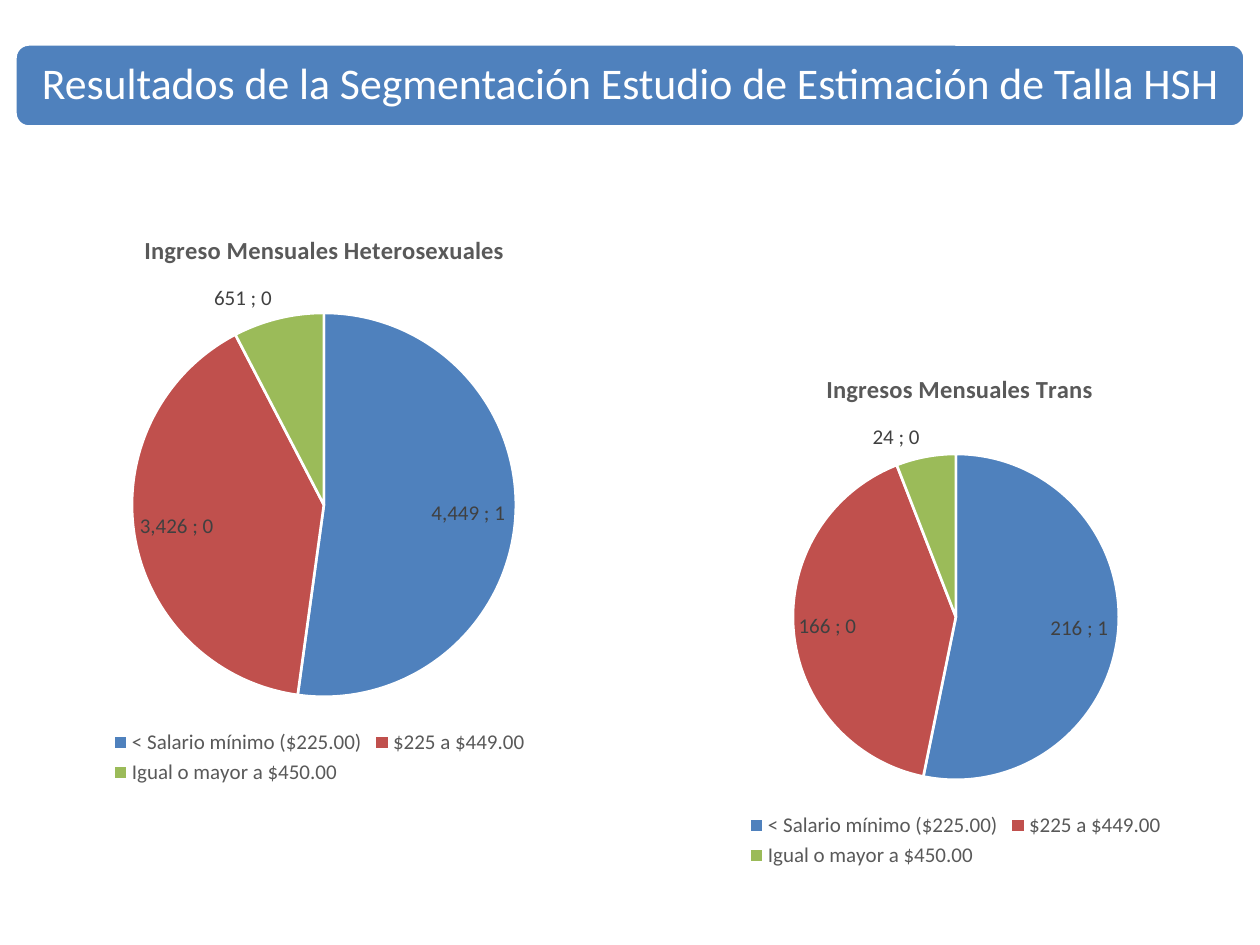
from dataclasses import dataclass

from lxml import etree
from pptx import Presentation
from pptx.chart.data import CategoryChartData
from pptx.dml.color import RGBColor
from pptx.enum.chart import XL_CHART_TYPE as ChartType
from pptx.enum.chart import XL_LABEL_POSITION as LabelPos
from pptx.enum.chart import XL_LEGEND_POSITION as LegendPos
from pptx.enum.shapes import MSO_SHAPE as Shape
from pptx.enum.text import MSO_ANCHOR as Anchor
from pptx.enum.text import MSO_AUTO_SIZE as AutoSize
from pptx.enum.text import PP_ALIGN as Align
from pptx.oxml.ns import qn
from pptx.util import Pt

PX = 914400 // 126  # EMU per pixel
TITLE_ONLY = 5


@dataclass(frozen=True)
class Theme:
    font: str = "Calibri"
    white: str = "FFFFFF"
    banner: str = "4F81BD"
    slices: tuple = ("4F81BD", "C0504D", "9BBB59")
    label: str = "404040"
    muted: str = "595959"
    title_size: float = 25
    chart_title_size: float = 14
    text_size: float = 12


def rgb(value):
    return RGBColor.from_string(value)


def set_layout(parent, index, **fractions):
    """Give a chart part a manual layout, as fractions of the chart."""
    for old in parent.findall(qn("c:layout")):
        parent.remove(old)
    layout = etree.Element(qn("c:layout"))
    manual = etree.SubElement(layout, qn("c:manualLayout"))
    if "w" in fractions:
        etree.SubElement(manual, qn("c:layoutTarget"), val="inner")
    for axis in "xy":
        etree.SubElement(manual, qn(f"c:{axis}Mode"), val="edge")
    for name, value in fractions.items():
        etree.SubElement(manual, qn(f"c:{name}"), val=f"{value:.4f}")
    parent.insert(index, layout)


class Deck:
    def __init__(self, width, height, theme):
        self.theme = theme
        self.prs = Presentation()
        self.prs.slide_width, self.prs.slide_height = width * PX, height * PX
        self.s = self.prs.slides.add_slide(self.prs.slide_layouts[TITLE_ONLY])

    def style(self, font, size, color, bold=False):
        font.name, font.size, font.bold = self.theme.font, Pt(size), bold
        font.color.rgb = rgb(color)

    def banner(self, *box):
        sp = self.s.shapes.add_shape(Shape.ROUNDED_RECTANGLE, *(v * PX for v in box))
        sp.shadow.inherit = False
        sp.fill.solid()
        sp.fill.fore_color.rgb = rgb(self.theme.banner)
        sp.line.color.rgb = rgb(self.theme.white)
        sp.line.width = Pt(2)

    def title(self, text, *box):
        sp = self.s.shapes.title
        sp.left, sp.top, sp.width, sp.height = (v * PX for v in box)
        tf = sp.text_frame
        tf.text = text
        tf.word_wrap, tf.auto_size = True, AutoSize.NONE
        tf.vertical_anchor = Anchor.MIDDLE
        tf.margin_left = tf.margin_right = tf.margin_top = tf.margin_bottom = 12 * PX
        p = tf.paragraphs[0]
        p.alignment, p.line_spacing = Align.CENTER, 0.9
        self.style(p.font, self.theme.title_size, self.theme.white)
        self.s.shapes._spTree.append(sp._element)  # in front of the banner

    def pie(self, title, categories, values, box, title_at, circle):
        """Add a pie; title_at is (left, top), circle is (left, top, diameter)."""
        theme = self.theme
        left, top, width, height = box
        data = CategoryChartData(number_format="#,##0_-")
        data.categories = categories
        data.add_series("Series 1", values)
        frame = self.s.shapes.add_chart(ChartType.PIE, *(v * PX for v in box), data)
        chart = frame.chart
        self.style(chart.font, theme.text_size, theme.label)

        # Chart title
        chart.has_title = True
        tf = chart.chart_title.text_frame
        tf.text = title
        self.style(tf.paragraphs[0].font, theme.chart_title_size, theme.muted, bold=True)
        x, y = title_at
        set_layout(chart.chart_title._element, 1,
                   x=(x - left) / width, y=(y - top) / height)

        # Circle and slices
        x, y, size = circle
        set_layout(chart._chartSpace.chart.plotArea, 0,
                   x=(x - left) / width, y=(y - top) / height,
                   w=size / width, h=size / height)
        plot = chart.plots[0]
        plot.vary_by_categories = True
        for i, color in enumerate(theme.slices):
            fmt = plot.series[0].points[i].format
            fmt.fill.solid()
            fmt.fill.fore_color.rgb = rgb(color)
            fmt.line.color.rgb = rgb(theme.white)
            fmt.line.width = Pt(1.5)

        # Labels with value and share
        plot.has_data_labels = True
        labels = plot.data_labels
        labels.show_value = labels.show_percentage = True
        labels.number_format = "#,##0_-"
        labels.number_format_is_linked = False
        labels.position = LabelPos.BEST_FIT
        self.style(labels.font, theme.text_size, theme.label)
        separator = etree.Element(qn("c:separator"))
        separator.text = "; "
        labels._element.find(qn("c:showBubbleSize")).addnext(separator)

        # Legend
        chart.has_legend = True
        chart.legend.position = LegendPos.BOTTOM
        chart.legend.include_in_layout = False
        self.style(chart.legend.font, theme.text_size, theme.muted)


def main():
    deck = Deck(1260, 945, Theme())

    # Heading
    deck.banner(15, 44, 1230, 83)
    deck.title("Resultados de la Segmentación Estudio de Estimación de Talla HSH",
               19, 48, 1222, 74)

    # Monthly income of each group
    incomes = ["< Salario mínimo ($225.00)", "$225 a $449.00", "Igual o mayor a $450.00"]
    deck.pie("Ingreso Mensuales Heterosexuales", incomes, (4449, 3426, 651),
             (-25, 204, 689, 586), (140, 229), (132, 313, 384))
    deck.pie("Ingresos Mensuales Trans", incomes, (216, 166, 24),
             (665, 344, 581, 529), (822, 368), (793, 454, 326))

    deck.prs.save("out.pptx")


if __name__ == "__main__":
    main()
